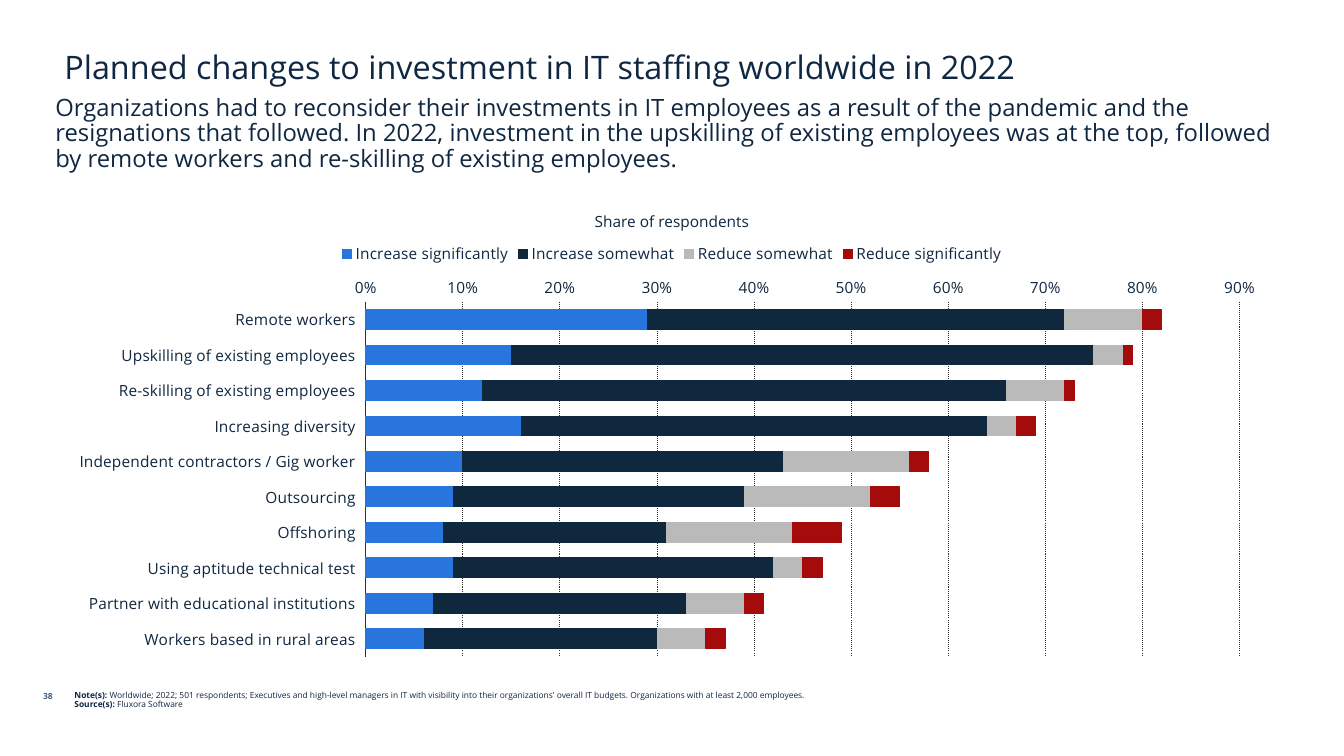
from dataclasses import dataclass

from lxml.etree import SubElement
from pptx import Presentation
from pptx.chart.data import CategoryChartData
from pptx.dml.color import RGBColor
from pptx.enum.chart import XL_CHART_TYPE as ChartType
from pptx.enum.chart import XL_LEGEND_POSITION as LegendPosition
from pptx.enum.chart import XL_TICK_LABEL_POSITION as LabelPosition
from pptx.enum.chart import XL_TICK_MARK as TickMark
from pptx.enum.dml import MSO_LINE_DASH_STYLE as Dash
from pptx.enum.text import MSO_ANCHOR as Anchor
from pptx.enum.text import PP_ALIGN as Align
from pptx.util import Inches, Pt


@dataclass(frozen=True)
class Theme:
    font: str = "Open Sans"
    ink: str = "0F2741"
    muted: str = "455F7C"
    rule: str = "2F2F2F"
    title: float = 23.1
    lead: float = 17
    label: float = 11
    note: float = 6
    hairline: float = 0.75


THEME = Theme()


def style_font(font, size, color=THEME.ink, bold=False):
    font.name, font.size, font.bold = THEME.font, Pt(size), bold
    font.color.rgb = RGBColor.from_string(color)


def add_text(place, paragraphs, size, color=THEME.ink, align=Align.LEFT,
             anchor=Anchor.TOP, spacing=None):
    """Add a text box; each paragraph is a list of (text, bold) spans."""
    box = page.shapes.add_textbox(*(Inches(length) for length in place))
    frame = box.text_frame
    frame.word_wrap, frame.vertical_anchor = True, anchor
    for index, spans in enumerate(paragraphs):
        para = frame.add_paragraph() if index else frame.paragraphs[0]
        para.alignment, para.line_spacing = align, spacing
        for text, bold in spans:
            span = para.add_run()
            span.text = text
            style_font(span.font, size, color, bold)


deck = Presentation()
deck.slide_width, deck.slide_height = Inches(13.33), Inches(7.5)
page = deck.slides.add_slide(deck.slide_layouts[6])

MARGIN = 0.64
NOTE_TOP = 6.81

# Heading
add_text((0.54, 0.46, 12.24, 0.44),
         [[("Planned changes to investment in IT staffing worldwide in 2022", False)]],
         THEME.title, anchor=Anchor.BOTTOM, spacing=0.8)
add_text((0.45, 0.9, 12.33, 1.16),
         [[("Organizations had to reconsider their investments in IT employees as a result "
            "of the pandemic and the resignations that followed. In 2022, investment in "
            "the upskilling of existing employees was at the top, followed by remote "
            "workers and re-skilling of existing employees.", False)]],
         THEME.lead, spacing=0.9)

# Chart
STAFFING = {
    "Remote workers": (0.29, 0.43, 0.08, 0.02),
    "Upskilling of existing employees": (0.15, 0.6, 0.03, 0.01),
    "Re-skilling of existing employees": (0.12, 0.54, 0.06, 0.01),
    "Increasing diversity": (0.16, 0.48, 0.03, 0.02),
    "Independent contractors / Gig worker": (0.1, 0.33, 0.13, 0.02),
    "Outsourcing": (0.09, 0.3, 0.13, 0.03),
    "Offshoring": (0.08, 0.23, 0.13, 0.05),
    "Using aptitude technical test": (0.09, 0.33, 0.03, 0.02),
    "Partner with educational institutions": (0.07, 0.26, 0.06, 0.02),
    "Workers based in rural areas": (0.06, 0.24, 0.05, 0.02),
}
ANSWERS = {
    "Increase significantly": "2875DD",
    "Increase somewhat": "0F283E",
    "Reduce somewhat": "BABABA",
    "Reduce significantly": "A60B0B",
}

data = CategoryChartData(number_format="0%")
data.categories = list(STAFFING)
for answer, shares in zip(ANSWERS, zip(*STAFFING.values())):
    data.add_series(answer, shares)
chart = page.shapes.add_chart(ChartType.BAR_STACKED, Inches(MARGIN), Inches(2.3),
                              Inches(12.05), Inches(4.3), data).chart
chart.has_title = False
style_font(chart.font, THEME.label)

chart.has_legend = True
chart.legend.position = LegendPosition.TOP
chart.legend.include_in_layout = False
style_font(chart.legend.font, THEME.label)

plot = chart.plots[0]
plot.gap_width, plot.overlap, plot.vary_by_categories = 80, 100, False
for series, color in zip(plot.series, ANSWERS.values()):
    series.format.fill.solid()
    series.format.fill.fore_color.rgb = RGBColor.from_string(color)
    series.format.line.color.rgb = RGBColor.from_string(color)
    series.format.line.width = Pt(THEME.hairline)

groups, scale = chart.category_axis, chart.value_axis
for axis in (groups, scale):
    axis.major_tick_mark = axis.minor_tick_mark = TickMark.NONE
    style_font(axis.tick_labels.font, THEME.label)
groups.reverse_order = True
groups.tick_label_position = LabelPosition.LOW
scale.minimum_scale, scale.maximum_scale, scale.major_unit = 0, 0.9, 0.1
scale.tick_labels.number_format = "#,##0%"
scale.tick_labels.number_format_is_linked = False
scale.format.line.fill.background()
scale.has_major_gridlines = True
grid = scale.major_gridlines.format.line
for line in (groups.format.line, grid):
    line.color.rgb = RGBColor.from_string(THEME.rule)
    line.width = Pt(THEME.hairline)
grid.dash_style = Dash.ROUND_DOT

add_text((5.5, 2.06, 2.33, 0.24), [[("Share of respondents", False)]],
         THEME.label, align=Align.CENTER)

# Footer
add_text((0, NOTE_TOP, 0.62, 0.3), [[("38", True)]], THEME.note,
         color=THEME.muted, align=Align.RIGHT)
add_text((MARGIN, NOTE_TOP, 10.47, 0.58),
         [[("Note(s): ", True),
           ("Worldwide; 2022; 501 respondents; Executives and high-level managers in IT "
            "with visibility into their organizations' overall IT budgets. "
            "Organizations with at least 2,000 employees.", False)],
          [("Source(s): ", True), ("Fluxora Software", False)]],
         THEME.note, spacing=0.9)

deck.save("out.pptx")
